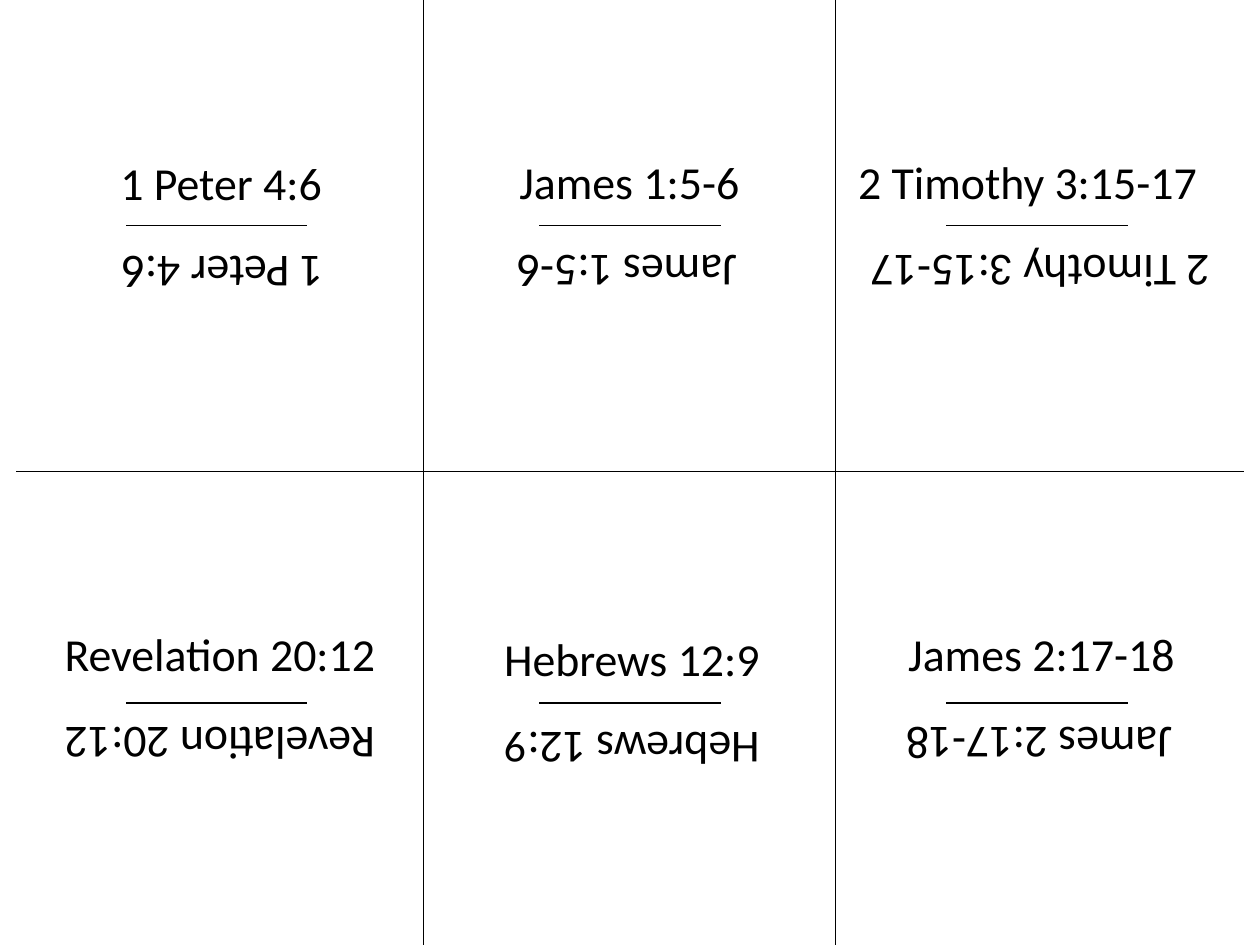
from pptx import Presentation
from pptx.dml.color import RGBColor
from pptx.enum.shapes import MSO_CONNECTOR
from pptx.enum.text import MSO_AUTO_SIZE, PP_ALIGN
from pptx.oxml.ns import qn
from pptx.util import Inches, Pt
from lxml.etree import SubElement

SLIDE_WIDTH, SLIDE_HEIGHT = 10, 7.5
COLUMN_CUTS = (3.36, 6.63)
ROW_CUT = 3.74
MARGIN = 0.13
LABEL_WIDTH, LABEL_HEIGHT = 3.19, 0.54
TURNED_OFFSET = 0.73
FOLD_LEFTS = (1, 4.28, 7.51)
FOLD_LENGTH = 1.44
FOLD_TOPS = (1.79, 5.58)

# verse, left of upright label, left of turned label, top of upright label
CARDS = (
    ("1 Peter 4:6", 0.16, 0.17, 1.18),
    ("James 1:5-6", 3.4, 3.38, 1.17),
    ("2 Timothy 3:15-17", 6.56, 6.66, 1.17),
    ("Revelation 20:12", 0.15, 0.15, 4.92),
    ("Hebrews 12:9", 3.42, 3.42, 4.96),
    ("James 2:17-18", 6.67, 6.65, 4.92),
)


def color(hex_string):
    return RGBColor.from_string(hex_string)


class CardSheet:
    font = "Calibri"
    size = 26.2
    ink = "000000"
    line_width = 0.75

    def __init__(self, slide):
        self.slide = slide

    def line(self, x1, y1, x2, y2):
        rule = self.slide.shapes.add_connector(
            MSO_CONNECTOR.STRAIGHT, Inches(x1), Inches(y1), Inches(x2), Inches(y2))
        rule.line.color.rgb = color(self.ink)
        rule.line.width = Pt(self.line_width)
        SubElement(rule._element.spPr, qn("a:effectLst"))

    def label(self, verse, left, top, rotation=0):
        box = self.slide.shapes.add_textbox(
            Inches(left), Inches(top), Inches(LABEL_WIDTH), Inches(LABEL_HEIGHT))
        box.rotation = rotation
        frame = box.text_frame
        frame.word_wrap = True
        frame.auto_size = MSO_AUTO_SIZE.SHAPE_TO_FIT_TEXT
        paragraph = frame.paragraphs[0]
        paragraph.alignment = PP_ALIGN.CENTER
        run = paragraph.add_run()
        run.text = verse
        run.font.name = self.font
        run.font.size = Pt(self.size)
        run.font.color.rgb = color(self.ink)

    def card(self, verse, upright_left, turned_left, top):
        """Write the verse twice, so that it reads from both sides of the fold."""
        self.label(verse, upright_left, top)
        self.label(verse, turned_left, top + TURNED_OFFSET, rotation=180)


def main():
    deck = Presentation()
    deck.slide_width, deck.slide_height = Inches(SLIDE_WIDTH), Inches(SLIDE_HEIGHT)
    sheet = CardSheet(deck.slides.add_slide(deck.slide_layouts[6]))

    sheet.line(MARGIN, ROW_CUT, SLIDE_WIDTH - MARGIN, ROW_CUT)
    for cut in COLUMN_CUTS:
        sheet.line(cut, 0, cut, SLIDE_HEIGHT)
    for top in FOLD_TOPS:
        for left in FOLD_LEFTS:
            sheet.line(left, top, left + FOLD_LENGTH, top)
    for card in CARDS:
        sheet.card(*card)

    deck.save("out.pptx")


if __name__ == "__main__":
    main()
